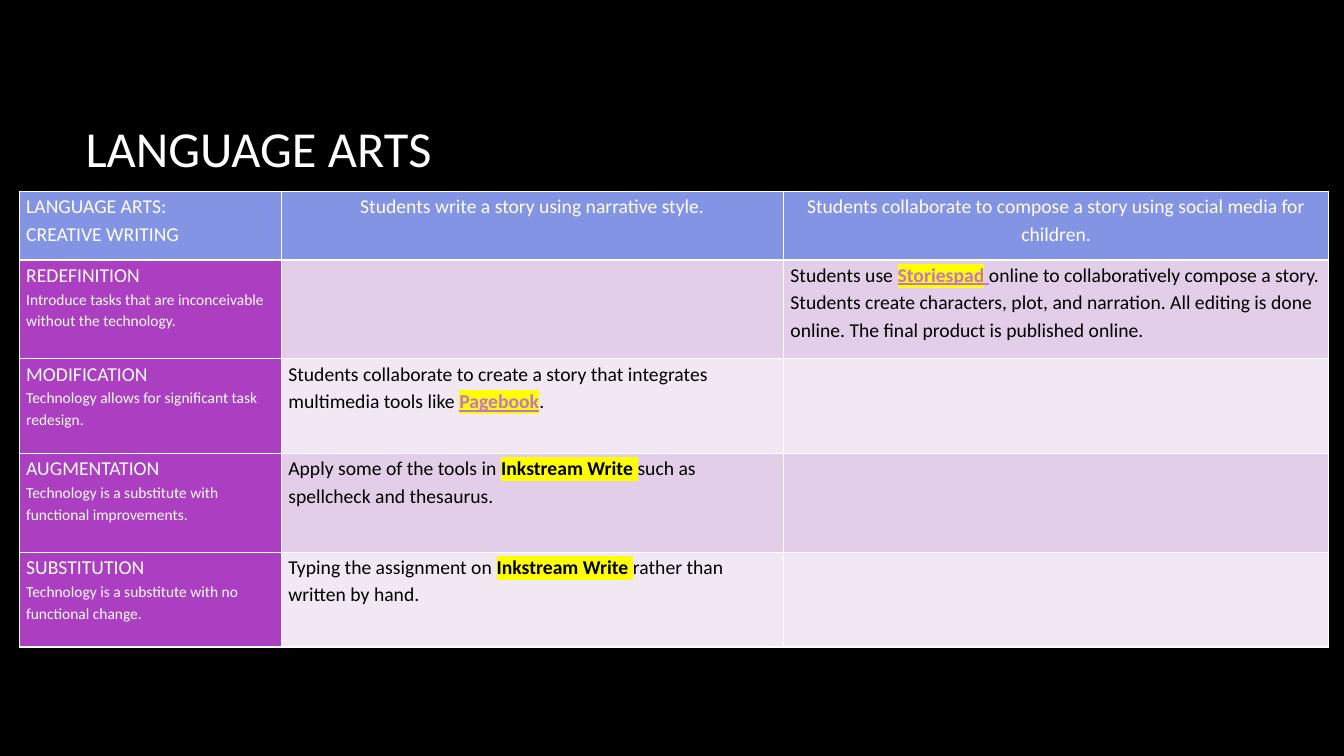
"""Build a slide with a table of language arts tasks by level of technology use."""
import lxml.etree
import pptx
import pptx.dml.color
import pptx.enum.text
import pptx.oxml
import pptx.oxml.ns
import pptx.util

COLORS = {
    "background": "000000", "white": "FFFFFF", "black": "000000",
    "header": "8394E4", "level": "AC3EC1", "band_dark": "E3CEE9",
    "band_light": "F1E8F4", "tool_link": "C573D2", "highlight": "FFFF00",
}
FONT = "Calibri"
TITLE = "LANGUAGE ARTS"
HEADERS = [
    ["LANGUAGE ARTS:", "CREATIVE WRITING"],
    ["Students write a story using narrative style."],
    ["Students collaborate to compose a story using social media for children."],
]
LEVELS = [
    ("REDEFINITION", "Introduce tasks that are inconceivable without the technology."),
    ("MODIFICATION", "Technology allows for significant task redesign."),
    ("AUGMENTATION", "Technology is a substitute with functional improvements."),
    ("SUBSTITUTION", "Technology is a substitute with no functional change."),
]
TASKS = {
    (1, 2): [("Students use ", "plain"), ("Storiespad", "link"), (" ", "gap"),
             ("online to collaboratively compose a story. Students create characters, "
              "plot, and narration. All editing is done online. The final product is "
              "published online.", "plain")],
    (2, 1): [("Students collaborate to create a story that integrates multimedia "
              "tools like ", "plain"), ("Pagebook", "link"), (".", "plain")],
    (3, 1): [("Apply some of the tools in ", "plain"), ("Inkstream Write ", "tool"),
             ("such as spellcheck and thesaurus.", "plain")],
    (4, 1): [("Typing the assignment on ", "plain"), ("Inkstream Write ", "tool"),
             ("rather than written by hand.", "plain")],
}
RUN_STYLES = {
    "plain": ("black", False, False, False),
    "link": ("tool_link", True, True, True),
    "gap": ("tool_link", False, True, False),
    "tool": ("black", True, False, True),
}
COLUMN_WIDTHS = [2.6, 4.98, 5.41]
ROW_HEIGHTS = [0.68, 0.98, 0.94, 0.98, 0.94]
TABLE_LEFT, TABLE_TOP = 0.19, 1.9

Inches, Pt = pptx.util.Inches, pptx.util.Pt
PP_ALIGN = pptx.enum.text.PP_ALIGN


def rgb(name):
    return pptx.dml.color.RGBColor.from_string(COLORS[name])


def set_font(font, size, color):
    font.name, font.size = FONT, Pt(size)
    font.color.rgb = rgb(color)


def style_cell(cell, fill):
    properties = cell._tc.get_or_add_tcPr()
    for side in ("lnL", "lnR", "lnT", "lnB"):
        properties.append(pptx.oxml.parse_xml(
            f'<a:{side} {pptx.oxml.ns.nsdecls("a")} w="{Pt(1)}"><a:solidFill>'
            f'<a:srgbClr val="{COLORS["white"]}"/></a:solidFill></a:{side}>'))
    cell.fill.solid()
    cell.fill.fore_color.rgb = rgb(fill)
    cell.margin_left = cell.margin_right = Inches(0.07)
    cell.margin_top = cell.margin_bottom = 0


def write_lines(cell, lines, sizes, alignment):
    for index, (line, size) in enumerate(zip(lines, sizes)):
        frame = cell.text_frame
        paragraph = frame.add_paragraph() if index else frame.paragraphs[0]
        paragraph.text = line
        paragraph.line_spacing = 1.15
        paragraph.alignment = alignment
        set_font(paragraph.font, size, "white")


def write_task(cell, parts):
    paragraph = cell.text_frame.paragraphs[0]
    paragraph.line_spacing = 1.15
    for text, style in parts:
        color, bold, underline, highlighted = RUN_STYLES[style]
        run = paragraph.add_run()
        run.text = text
        set_font(run.font, 14, color)
        run.font.bold, run.font.underline = bold, underline
        if highlighted:
            fill = run.font._element.find(pptx.oxml.ns.qn("a:solidFill"))
            fill.addnext(pptx.oxml.parse_xml(
                f'<a:highlight {pptx.oxml.ns.nsdecls("a")}>'
                f'<a:srgbClr val="{COLORS["highlight"]}"/></a:highlight>'))


def add_title(slide):
    box = slide.shapes.add_textbox(Inches(0.75), Inches(0.67), Inches(11.08), Inches(1.59))
    frame = box.text_frame
    frame.word_wrap = True
    frame.vertical_anchor = pptx.enum.text.MSO_ANCHOR.MIDDLE
    frame.text = TITLE
    set_font(frame.paragraphs[0].font, 36, "white")


def add_task_table(slide):
    table = slide.shapes.add_table(
        len(ROW_HEIGHTS), len(COLUMN_WIDTHS), Inches(TABLE_LEFT), Inches(TABLE_TOP),
        Inches(sum(COLUMN_WIDTHS)), Inches(sum(ROW_HEIGHTS))).table
    table.first_row = table.horz_banding = False
    for column, width in zip(table.columns, COLUMN_WIDTHS):
        column.width = Inches(width)
    for row, height in zip(table.rows, ROW_HEIGHTS):
        row.height = Inches(height)
    for row in range(len(ROW_HEIGHTS)):
        for column in range(len(COLUMN_WIDTHS)):
            cell = table.cell(row, column)
            if row == 0:
                style_cell(cell, "header")
                alignment = PP_ALIGN.CENTER if column else PP_ALIGN.LEFT
                write_lines(cell, HEADERS[column], (14, 14), alignment)
            elif column == 0:
                style_cell(cell, "level")
                write_lines(cell, LEVELS[row - 1], (14, 11), PP_ALIGN.LEFT)
            else:
                style_cell(cell, "band_dark" if row % 2 else "band_light")
                write_task(cell, TASKS.get((row, column), []))


def main():
    presentation = pptx.Presentation()
    presentation.slide_width, presentation.slide_height = Inches(13.33), Inches(7.5)
    slide = presentation.slides.add_slide(presentation.slide_layouts[6])
    slide.background.fill.solid()
    slide.background.fill.fore_color.rgb = rgb("background")
    add_title(slide)
    add_task_table(slide)
    presentation.save("out.pptx")


if __name__ == "__main__":
    main()
